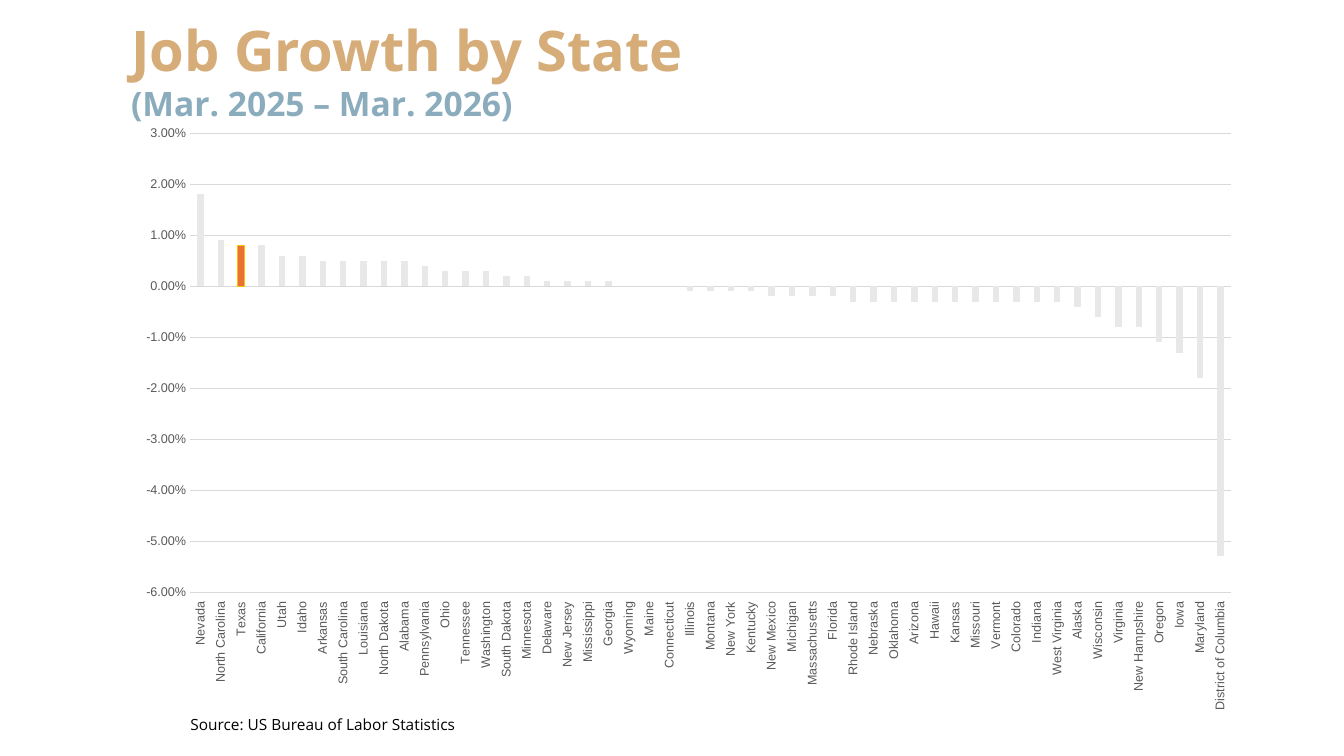
"""Build the slide on job growth by state as a column chart."""
from lxml import etree
from pptx import Presentation, util as u
from pptx.chart.data import CategoryChartData
from pptx.dml.color import RGBColor
from pptx.enum import chart as ch, text as tx

GOLD = RGBColor(0xD6, 0xAC, 0x78)
BLUE = RGBColor(0x8A, 0xAC, 0xBC)
BLACK = RGBColor(0, 0, 0)
GREY = RGBColor(0x59, 0x59, 0x59)
RULE = RGBColor(0xD9, 0xD9, 0xD9)
PALE = RGBColor(0xE8, 0xE8, 0xE8)
RUST = RGBColor(0xE9, 0x71, 0x32)
AMBER = RGBColor(0xFF, 0xC0, 0x00)

GROWTH = {
    18: "Nevada",
    9: "North Carolina",
    8: "Texas, California",
    6: "Utah, Idaho",
    5: "Arkansas, South Carolina, Louisiana, North Dakota, Alabama",
    4: "Pennsylvania",
    3: "Ohio, Tennessee, Washington",
    2: "South Dakota, Minnesota",
    1: "Delaware, New Jersey, Mississippi, Georgia",
    0: "Wyoming, Maine, Connecticut",
    -1: "Illinois, Montana, New York, Kentucky",
    -2: "New Mexico, Michigan, Massachusetts, Florida",
    -3: "Rhode Island, Nebraska, Oklahoma, Arizona, Hawaii, Kansas, "
        "Missouri, Vermont, Colorado, Indiana, West Virginia",
    -4: "Alaska",
    -6: "Wisconsin",
    -8: "Virginia, New Hampshire",
    -11: "Oregon",
    -13: "Iowa",
    -18: "Maryland",
    -53: "District of Columbia",
}

deck = Presentation()
deck.slide_width, deck.slide_height = u.Inches(13.33), u.Inches(7.5)
slide = deck.slides.add_slide(deck.slide_layouts[5])


def area(left, top, wide, high):
    """Turn percent shares of the slide into lengths."""
    col, row = deck.slide_width / 100, deck.slide_height / 100
    return [int(n) for n in (left * col, top * row, wide * col, high * row)]


def style(item, **form):
    """Set each format value on the item."""
    for key, val in form.items():
        setattr(item, key, val)


title = slide.shapes.title
spot = area(9, 1.47, 73.29, 15.33)
style(title, **dict(zip(("left", "top", "width", "height"), spot)))
frame = title.text_frame
style(frame, text="Job Growth by State\n(Mar. 2025 – Mar. 2026)",
      margin_top=0, margin_bottom=0, word_wrap=True,
      auto_size=tx.MSO_AUTO_SIZE.NONE, vertical_anchor=tx.MSO_ANCHOR.MIDDLE)
for para, size, tint in zip(frame.paragraphs, (40, 24), (GOLD, BLUE)):
    style(para, alignment=tx.PP_ALIGN.LEFT, line_spacing=1.0, space_before=0)
    font = para.runs[0].font
    style(font, name="Open Sans", size=u.Pt(size), bold=True)
    font.color.rgb = tint

note = slide.shapes.add_textbox(*area(13.43, 94, 22.73, 3.87)).text_frame
style(note, text="Source: US Bureau of Labor Statistics", word_wrap=True,
      auto_size=tx.MSO_AUTO_SIZE.SHAPE_TO_FIT_TEXT)
font = note.paragraphs[0].runs[0].font
style(font, name="Open Sans", size=u.Pt(11))
font.color.rgb = BLACK

pairs = [(state, rate / 1000) for rate, names in GROWTH.items()
         for state in names.split(", ")]
states, rates = zip(*pairs)
data = CategoryChartData(number_format="0.00%")
data.categories = states
data.add_series("Series 1", rates)
chart = slide.shapes.add_chart(ch.XL_CHART_TYPE.COLUMN_CLUSTERED,
                               *area(4.58, 16.67, 87.02, 77.33), data).chart
style(chart, has_legend=False, has_title=False)
style(chart.font, name="Arial", size=u.Pt(10))

plot = chart.plots[0]
style(plot, gap_width=219, overlap=-27, vary_by_categories=False)
bars = plot.series[0]
bars.invert_if_negative = False
bars.format.fill.solid()
bars.format.fill.fore_color.rgb = PALE
mark = bars.points[states.index("Texas")].format
mark.fill.solid()
mark.fill.fore_color.rgb = RUST
mark.line.color.rgb = AMBER
mark.line.width = u.Pt(0.75)

cat, val = chart.category_axis, chart.value_axis
for axis in (cat, val):
    style(axis, major_tick_mark=ch.XL_TICK_MARK.NONE,
          minor_tick_mark=ch.XL_TICK_MARK.NONE)
    font = axis.tick_labels.font
    style(font, name="Arial", size=u.Pt(9))
    font.color.rgb = GREY
cat.tick_label_position = ch.XL_TICK_LABEL_POSITION.LOW
turn = cat._element.txPr.bodyPr
turn.set("rot", "-5400000")
turn.set("vert", "horz")
style(val, minimum_scale=-0.06, maximum_scale=0.03, major_unit=0.01)
style(val.tick_labels, number_format="0.00%", number_format_is_linked=False)
val.format.line.fill.background()
for line in (cat.format.line, val.major_gridlines.format.line):
    line.color.rgb = RULE
    line.width = u.Pt(0.75)

area_xml = chart.element.chart.plotArea
space = etree.QName(area_xml).namespace
for old in area_xml.findall(f"{{{space}}}layout"):
    area_xml.remove(old)
layout = etree.Element(f"{{{space}}}layout")
manual = etree.SubElement(layout, f"{{{space}}}manualLayout")
for tag, value in dict(layoutTarget="inner", xMode="edge", yMode="edge",
                       x=0.11, y=0.01, w=0.89, h=0.79).items():
    etree.SubElement(manual, f"{{{space}}}{tag}").set("val", str(value))
area_xml.insert(0, layout)

deck.save("out.pptx")
